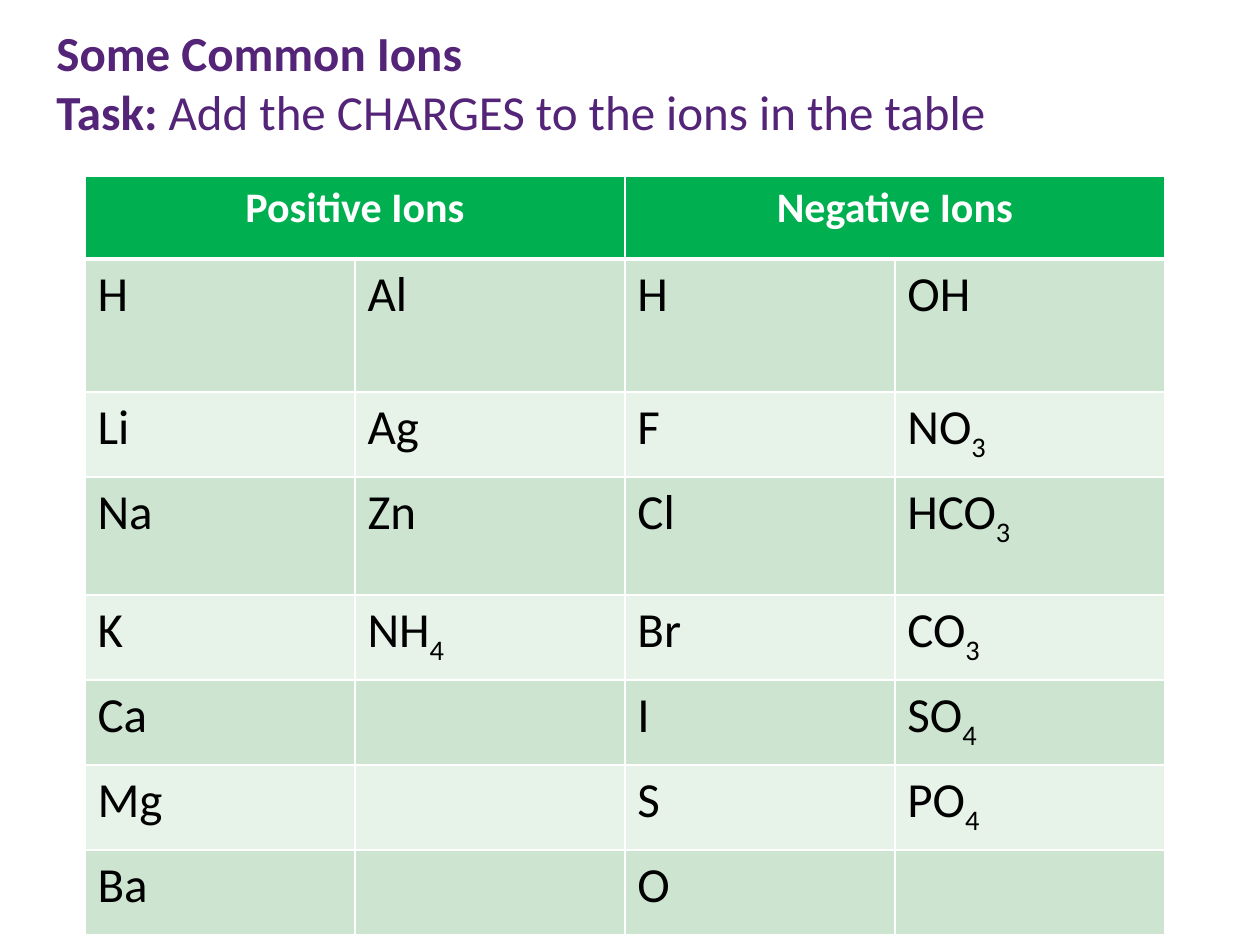
"""Build a worksheet slide with a table of common ions."""
import itertools

import lxml.etree
import pptx
import pptx.dml.color
import pptx.enum.text
import pptx.oxml.ns
import pptx.util

PX = pptx.util.Inches(1) / 126
COLORS = {"title": "542478", "header": "00B050", "dark": "CCE4D0",
          "light": "E7F2E9", "white": "FFFFFF", "black": "000000"}
HEADERS = ["Positive Ions", "Negative Ions"]
IONS = [
    ["H", "Al", "H", "OH"],
    ["Li", "Ag", "F", "NO3"],
    ["Na", "Zn", "Cl", "HCO3"],
    ["K", "NH4", "Br", "CO3"],
    ["Ca", "", "I", "SO4"],
    ["Mg", "", "S", "PO4"],
    ["Ba", "", "O", ""],
]
ROW_HEIGHTS = [83, 133, 85, 118] + [85] * 4
COLUMN_WIDTH = 270


def px(length):
    return pptx.util.Emu(round(length * PX))


def rgb(name):
    return pptx.dml.color.RGBColor.from_string(COLORS[name])


class SlideBuilder:
    """Hold the text style and the current slide."""

    font = "Calibri"

    def __init__(self, page):
        self.page = page

    def add_span(self, para, text, size, color, bold=False, subscript=False):
        span = para.add_run()
        span.text = text
        span.font.name = self.font
        span.font.size = pptx.util.Pt(size)
        span.font.bold = bold
        span.font.color.rgb = rgb(color)
        if subscript:
            span._r.get_or_add_rPr().set("baseline", "-25000")

    def add_title(self, left, top, width, height, lines):
        box = self.page.shapes.add_textbox(px(left), px(top), px(width), px(height))
        frame = box.text_frame
        frame.word_wrap = True
        for index, line in enumerate(lines):
            para = frame.add_paragraph() if index else frame.paragraphs[0]
            for text, bold in line:
                self.add_span(para, text, 28, "title", bold)

    def style_cell(self, cell, fill, top=1, bottom=1):
        properties = cell._tc.get_or_add_tcPr()
        widths = {"a:lnL": 1, "a:lnR": 1, "a:lnT": top, "a:lnB": bottom}
        for tag, points in widths.items():
            line = lxml.etree.SubElement(properties, pptx.oxml.ns.qn(tag),
                                         w=str(pptx.util.Pt(points)))
            solid = lxml.etree.SubElement(line, pptx.oxml.ns.qn("a:solidFill"))
            lxml.etree.SubElement(solid, pptx.oxml.ns.qn("a:srgbClr"), val=COLORS["white"])
        cell.fill.solid()
        cell.fill.fore_color.rgb = rgb(fill)

    def add_ion_table(self, left, top):
        columns = len(IONS[0])
        table = self.page.shapes.add_table(
            len(ROW_HEIGHTS), columns, px(left), px(top),
            px(columns * COLUMN_WIDTH), px(sum(ROW_HEIGHTS))).table
        for column in table.columns:
            column.width = px(COLUMN_WIDTH)
        for row, height in zip(table.rows, ROW_HEIGHTS):
            row.height = px(height)
        for cell in table.rows[0].cells:
            self.style_cell(cell, "header", bottom=3)
        for index, text in enumerate(HEADERS):
            cell = table.cell(0, 2 * index)
            cell.merge(table.cell(0, 2 * index + 1))
            para = cell.text_frame.paragraphs[0]
            para.alignment = pptx.enum.text.PP_ALIGN.CENTER
            self.add_span(para, text, 24, "white", bold=True)
        for row, ions in enumerate(IONS, start=1):
            for column, ion in enumerate(ions):
                cell = table.cell(row, column)
                self.style_cell(cell, "dark" if row % 2 else "light",
                                top=3 if row == 1 else 1)
                para = cell.text_frame.paragraphs[0]
                for is_digit, letters in itertools.groupby(ion, str.isdigit):
                    self.add_span(para, "".join(letters), 28, "black", subscript=is_digit)


def main():
    deck = pptx.Presentation()
    deck.slide_width, deck.slide_height = px(1260), px(945)
    builder = SlideBuilder(deck.slides.add_slide(deck.slide_layouts[6]))
    builder.add_ion_table(85, 176)
    builder.add_title(44, 16, 1150, 131, [
        [("Some Common Ions", True)],
        [("Task: ", True), ("Add the CHARGES to the ions in the table", False)],
    ])
    deck.save("out.pptx")


if __name__ == "__main__":
    main()
